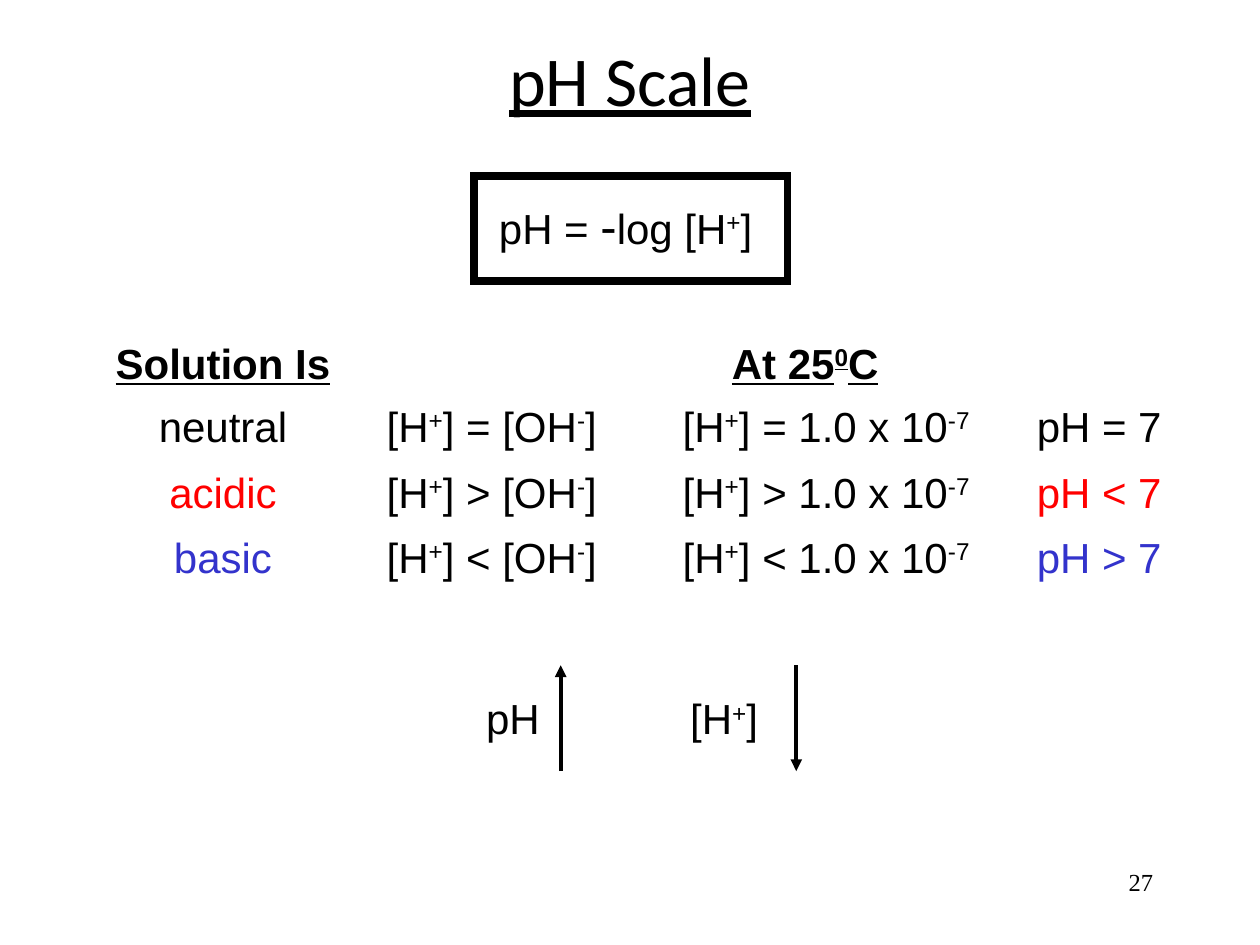
from lxml import etree
from pptx import Presentation
from pptx.dml.color import RGBColor
from pptx.enum.shapes import MSO_CONNECTOR, MSO_SHAPE
from pptx.enum.text import MSO_ANCHOR, MSO_AUTO_SIZE, PP_ALIGN
from pptx.oxml.ns import qn
from pptx.util import Inches, Pt

BLACK = RGBColor(0x00, 0x00, 0x00)
RED = RGBColor(0xFF, 0x00, 0x00)
BLUE = RGBColor(0x33, 0x33, 0xCC)
LEFT, CENTER, RIGHT = PP_ALIGN.LEFT, PP_ALIGN.CENTER, PP_ALIGN.RIGHT
TOP, MIDDLE = MSO_ANCHOR.TOP, MSO_ANCHOR.MIDDLE
GROW = MSO_AUTO_SIZE.SHAPE_TO_FIT_TEXT
RECTANGLE = MSO_SHAPE.RECTANGLE
STRAIGHT = MSO_CONNECTOR.STRAIGHT

LINE_HEIGHT = 0.5
ROW_STEP = 0.52
SOLUTIONS = [
    ("neutral", 1.22, "=", "=", BLACK),
    ("acidic", 1.06, ">", "<", RED),
    ("basic", 0.98, "<", ">", BLUE),
]


def write(text_frame, text, size=24, font="Arial", color=BLACK, align=LEFT):
    """Add to the first paragraph; text between two ^ marks is superscript."""
    paragraph = text_frame.paragraphs[0]
    paragraph.alignment = align
    paragraph.font.size = Pt(size)
    paragraph.font.name = font
    paragraph.font.color.rgb = color
    for index, part in enumerate(text.split("^")):
        if part:
            run = paragraph.add_run()
            run.text = part
            if index % 2:
                run._r.get_or_add_rPr().set("baseline", "30000")
    return paragraph


def add_label(slide, left, top, width, text, color=BLACK, align=LEFT):
    box = slide.shapes.add_textbox(
        Inches(left), Inches(top), Inches(width), Inches(LINE_HEIGHT))
    box.text_frame.word_wrap = False
    box.text_frame.auto_size = GROW
    return write(box.text_frame, text, color=color, align=align)


def add_heading(slide, center, top, width, text):
    paragraph = add_label(slide, center - width / 2, top, width, text, align=CENTER)
    paragraph.font.bold = True
    paragraph.font.underline = True


def add_title(slide, left, top, width, height):
    box = slide.shapes.add_textbox(
        Inches(left), Inches(top), Inches(width), Inches(height))
    box.text_frame.word_wrap = True
    box.text_frame.vertical_anchor = MIDDLE
    paragraph = write(box.text_frame, "pH Scale", 40, "Calibri", align=CENTER)
    paragraph.font.underline = True


def add_formula(slide, left, top, width, height):
    shape = slide.shapes.add_shape(
        RECTANGLE, Inches(left), Inches(top), Inches(width), Inches(height))
    shape.shadow.inherit = False
    shape.fill.background()
    shape.line.color.rgb = BLACK
    shape.line.width = Pt(4.5)
    etree.SubElement(shape.line._get_or_add_ln(), qn("a:miter"), lim="800000")
    frame = shape.text_frame
    frame.word_wrap = False
    frame.auto_size = GROW
    frame.vertical_anchor = TOP
    frame.margin_left = frame.margin_right = Inches(0.2)
    frame.margin_top = frame.margin_bottom = Inches(0.15)
    write(frame, "pH = ")
    minus = frame.paragraphs[0].add_run()
    minus.text = "-"
    minus.font.size = Pt(28)
    write(frame, "log [H^+^]")


def add_comparison(slide, left, top):
    """Place the headings and one row for each kind of solution."""
    name_center = left + 0.95
    add_heading(slide, name_center, top, 2, "Solution Is")
    add_heading(slide, left + 5.57, top, 1.38, "At 25^0^C")
    for row, (name, width, ion_sign, ph_sign, color) in enumerate(SOLUTIONS):
        row_top = top + LINE_HEIGHT + row * ROW_STEP
        add_label(slide, name_center - width / 2, row_top, width, name, color, CENTER)
        add_label(slide, left + 2.15, row_top, 1.89, f"[H^+^] {ion_sign} [OH^-^]")
        add_label(slide, left + 4.5, row_top, 2.52, f"[H^+^] {ion_sign} 1.0 x 10^-7^")
        add_label(slide, left + 7.31, row_top, 1.19, f"pH {ph_sign} 7", color)


def add_trend(slide, left, top, width, text, arrow_x, start, end):
    """Place a quantity and the arrow that shows how it changes."""
    add_label(slide, left, top, width, text)
    arrow = slide.shapes.add_connector(
        STRAIGHT, Inches(arrow_x), Inches(start), Inches(arrow_x), Inches(end))
    arrow.line.color.rgb = BLACK
    arrow.line.width = Pt(2.25)
    etree.SubElement(arrow.line._get_or_add_ln(), qn("a:tailEnd"), type="triangle")
    etree.SubElement(arrow._element.spPr, qn("a:effectLst"))


def add_slide_number(slide, left, top, width, height):
    box = slide.shapes.add_textbox(
        Inches(left), Inches(top), Inches(width), Inches(height))
    box.text_frame.word_wrap = True
    write(box.text_frame, "27", 14, "Times New Roman", align=RIGHT)


def main():
    presentation = Presentation()
    presentation.slide_width = Inches(10)
    presentation.slide_height = Inches(7.5)
    slide = presentation.slides.add_slide(presentation.slide_layouts[6])
    add_slide_number(slide, 7.17, 6.83, 2.08, 0.5)
    add_formula(slide, 3.76, 1.4, 2.49, 0.83)
    add_comparison(slide, 0.82, 2.63)
    add_trend(slide, 3.76, 5.45, 0.72, "pH", 4.45, 6.12, 5.28)
    add_trend(slide, 5.38, 5.45, 0.76, "[H^+^]", 6.32, 5.28, 6.12)
    add_title(slide, 0.5, 0, 9, 1.25)
    presentation.save("out.pptx")


if __name__ == "__main__":
    main()
